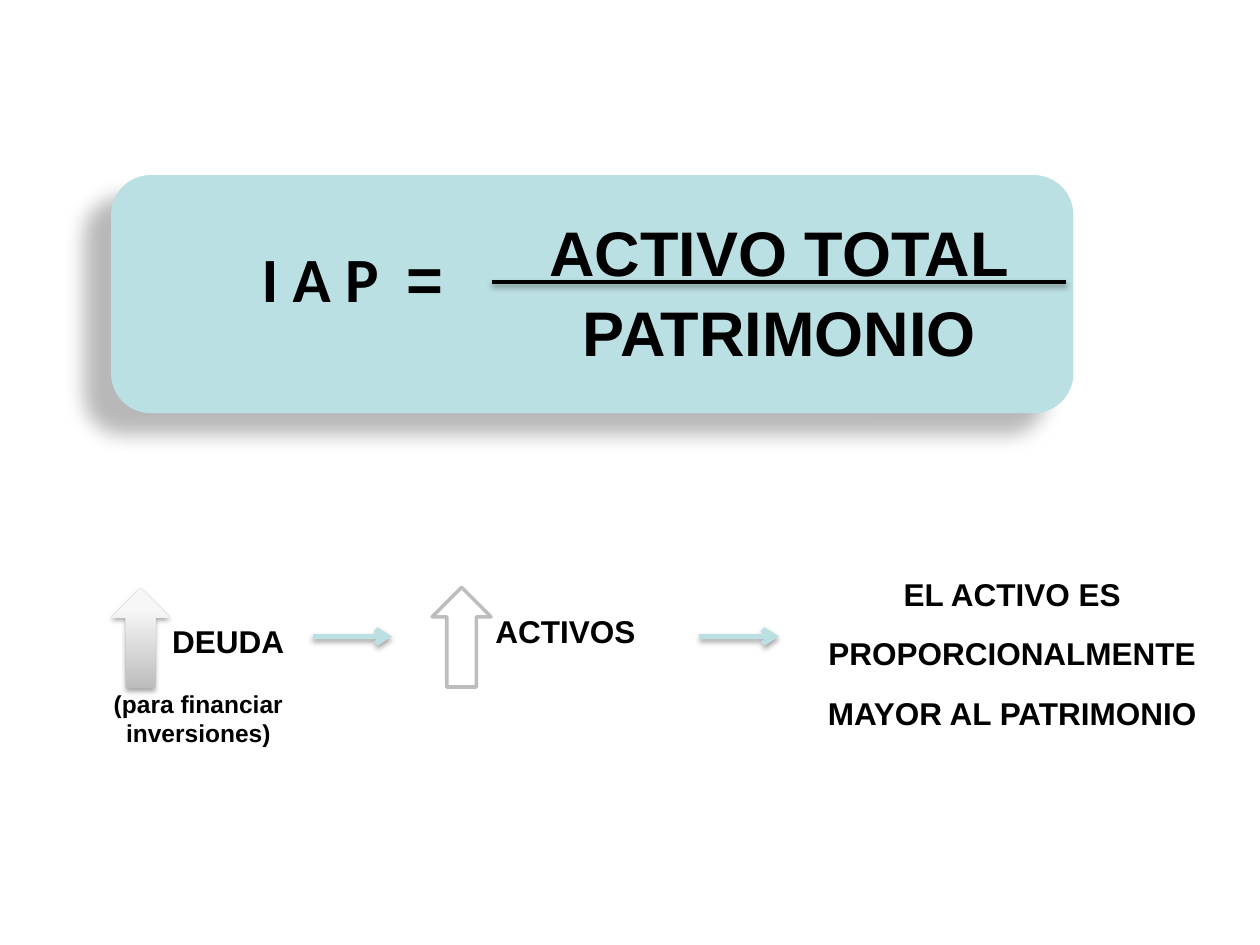
from lxml.etree import SubElement
from pptx import Presentation
from pptx.dml.color import RGBColor
from pptx.enum.shapes import MSO_CONNECTOR, MSO_SHAPE
from pptx.enum.text import MSO_ANCHOR, PP_ALIGN
from pptx.oxml.ns import qn
from pptx.util import Cm, Pt

BLACK = RGBColor(0, 0, 0)
WHITE = RGBColor(255, 255, 255)
AQUA = RGBColor(0xBB, 0xE0, 0xE3)
GREY = RGBColor(0xBD, 0xBD, 0xBD)
PALE = RGBColor(0xF7, 0xF7, 0xF7)

# Content: box in cm, anchor, line spacing, size, paragraphs of (text, font, tracking)
MID, TOP = MSO_ANCHOR.MIDDLE, MSO_ANCHOR.TOP
TEXTS = [
    ((4.01, 4.7, 6.2, 1.8), MID, 1, 36,
     [[("I A P", "Calibri", 0), (" ", "Calibri", 8), ("=", "Arial", 0)]]),
    ((10.21, 4.11, 11, 3.33), TOP, 1.05, 36,
     [[("ACTIVO TOTAL", "Arial", 0)], [("PATRIMONIO", "Arial", 0)]]),
    ((3.1, 12.43, 3, 1), MID, 1, 18, [[("DEUDA", "Arial", 0)]]),
    ((1.9, 13.78, 4.2, 1.4), MID, 1, 14,
     [[("(para financiar inversiones)", "Arial", 0)]]),
    ((9.6, 12.22, 3.6, 1), MID, 1, 18, [[("ACTIVOS", "Arial", 0)]]),
    ((16.1, 11.02, 8.61, 3.58), TOP, 1.58, 18,
     [[("EL ACTIVO ES PROPORCIONALMENTE MAYOR AL PATRIMONIO", "Arial", 0)]]),
]

# Shadows: opacity %, blur pt, distance pt, angle
DEEP = (28, 11.8, 19.7, 141)
FIRM = (38, 3.1, 1.6, 90)
SOFT = (35, 3.1, 1.8, 90)

# Lines: start x, end x, y in cm, colour, width, arrow, shadow
LINES = [
    (9.91, 21.49, 5.69, BLACK, 2, False, FIRM),
    (6.3, 7.9, 12.83, AQUA, 3, True, SOFT),
    (14.1, 15.7, 12.83, AQUA, 3, True, SOFT),
]

deck = Presentation()
deck.slide_width, deck.slide_height = Cm(25.4), Cm(19.05)
slide = deck.slides.add_slide(deck.slide_layouts[6])
shapes = slide.shapes


def cast(props, shade):
    """Give a shape's properties an outer shadow."""
    alpha, blur, dist, angle = shade
    effects = props.find(qn("a:effectLst"))
    if effects is None:
        effects = SubElement(props, qn("a:effectLst"))
    outer = SubElement(effects, qn("a:outerShdw"), blurRad=str(Pt(blur)),
                       dist=str(Pt(dist)), dir=str(angle * 60000),
                       algn="ctr", rotWithShape="0")
    tint = SubElement(outer, qn("a:srgbClr"), val="000000")
    SubElement(tint, qn("a:alpha"), val=str(alpha * 1000))


def add_form(kind, box, fill, edge=None, shade=None):
    form = shapes.add_shape(kind, *map(Cm, box))
    form.shadow.inherit = False
    if fill is None:  # grey at the foot, pale at the tip
        form.fill.gradient()
        form.fill.gradient_angle = 90
        for stop, (place, tone) in zip(form.fill.gradient_stops,
                                       [(0, GREY), (0.8, PALE)]):
            stop.position = place
            stop.color.rgb = tone
    else:
        form.fill.solid()
        form.fill.fore_color.rgb = fill
    if edge is None:
        form.line.fill.background()
    else:
        form.line.color.rgb, form.line.width = edge, Pt(2)
    if shade:
        cast(form._element.spPr, shade)


def add_text(box, anchor, space, size, paras):
    frame = shapes.add_textbox(*map(Cm, box)).text_frame
    frame.word_wrap = True
    frame.vertical_anchor = anchor
    for i, parts in enumerate(paras):
        para = frame.add_paragraph() if i else frame.paragraphs[0]
        para.alignment, para.line_spacing = PP_ALIGN.CENTER, space
        for text, face, track in parts:
            run = para.add_run()
            run.text = text
            look = {"name": face, "size": Pt(size), "bold": True}
            for key, value in look.items():
                setattr(run.font, key, value)
            run.font.color.rgb = BLACK
            if track:
                run.font._element.set("spc", str(track * 100))


def add_line(start, end, y, color, width, arrow, shade):
    link = shapes.add_connector(MSO_CONNECTOR.STRAIGHT,
                                Cm(start), Cm(y), Cm(end), Cm(y))
    link.line.color.rgb, link.line.width = color, Pt(width)
    if arrow:
        SubElement(link.line._get_or_add_ln(), qn("a:tailEnd"), type="arrow")
    cast(link._element.spPr, shade)


# Formula card and rising arrows
add_form(MSO_SHAPE.ROUNDED_RECTANGLE, (2.24, 3.53, 19.4, 4.8), AQUA, shade=DEEP)
add_form(MSO_SHAPE.UP_ARROW, (2.24, 11.86, 1.19, 2.01), None, shade=SOFT)
add_form(MSO_SHAPE.UP_ARROW, (8.71, 11.84, 1.19, 2.01), WHITE, edge=GREY)

# Words, fraction bar and flow arrows
for item in TEXTS:
    add_text(*item)
for item in LINES:
    add_line(*item)

deck.save("out.pptx")
